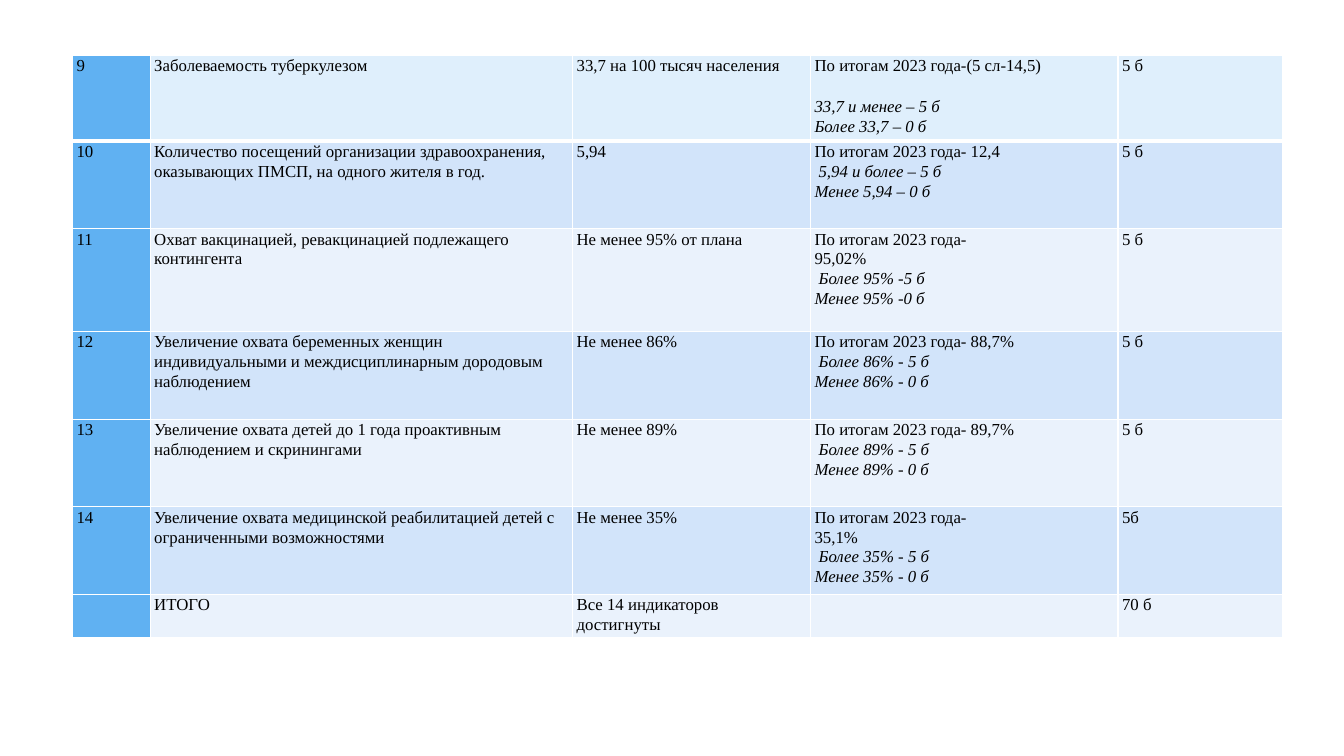
from lxml.etree import SubElement
from pptx import Presentation
from pptx.dml.color import RGBColor
from pptx.oxml.ns import qn
from pptx.util import Inches, Pt

# Number, indicator, target, result lines, scoring lines, points
INDICATORS = [
    ("9", "Заболеваемость туберкулезом", "33,7 на 100 тысяч населения",
     ["По итогам 2023 года-(5 сл-14,5)"],
     ["33,7 и менее – 5 б", "Более 33,7 – 0 б"], "5 б"),
    ("10", "Количество посещений организации здравоохранения, "
           "оказывающих ПМСП, на одного жителя в год.", "5,94",
     ["По итогам 2023 года- 12,4"],
     ["5,94 и более – 5 б", "Менее 5,94 – 0 б"], "5 б"),
    ("11", "Охват вакцинацией, ревакцинацией подлежащего контингента",
     "Не менее 95% от плана",
     ["По итогам 2023 года-", "95,02%"],
     ["Более 95% -5 б", "Менее 95% -0 б"], "5 б"),
    ("12", "Увеличение охвата беременных женщин индивидуальными и "
           "междисциплинарным дородовым наблюдением", "Не менее 86%",
     ["По итогам 2023 года- 88,7%"],
     ["Более 86% - 5 б", "Менее 86% - 0 б"], "5 б"),
    ("13", "Увеличение охвата детей до 1 года проактивным наблюдением "
           "и скринингами", "Не менее 89%",
     ["По итогам 2023 года- 89,7%"],
     ["Более 89% - 5 б", "Менее 89% - 0 б"], "5 б"),
    ("14", "Увеличение охвата медицинской реабилитацией детей с "
           "ограниченными возможностями", "Не менее 35%",
     ["По итогам 2023 года-", "35,1%"],
     ["Более 35% - 5 б", "Менее 35% - 0 б"], "5б"),
    ("", "ИТОГО", "Все 14 индикаторов достигнуты", [], [], "70 б"),
]
COLUMN_WIDTHS = [0.77, 4.19, 2.36, 3.05, 1.63]
ROW_HEIGHTS = [0.85, 0.87, 1.02, 0.87, 0.87, 0.87, 0.43]
COLORS = {"number": "60B1F2", "first": "DFEFFC", "odd": "D2E4FA",
          "even": "EAF2FC", "border": "FFFFFF", "text": "000000"}
FONT = "Times New Roman"
FONT_SIZE = 12
LINE_SPACING = 1.07
BLANK_LINE = 14.8


def add_line(cell, text, italic=False, indent=0, space_before=0):
    """Write text into the cell's empty paragraph, or into a new one."""
    frame = cell.text_frame
    paragraph = frame.add_paragraph() if frame.text else frame.paragraphs[0]
    paragraph.line_spacing = LINE_SPACING
    paragraph.space_before = Pt(space_before)
    if indent:
        paragraph._p.get_or_add_pPr().set("indent", str(Inches(indent)))
    run = paragraph.add_run()
    run.text = text
    run.font.name = FONT
    run.font.size = Pt(FONT_SIZE)
    run.font.italic = italic
    run.font.color.rgb = RGBColor.from_string(COLORS["text"])


def add_borders(cell, bottom_width):
    properties = cell._tc.get_or_add_tcPr()
    for side, width in (("L", 1), ("R", 1), ("T", 1), ("B", bottom_width)):
        line = SubElement(properties, qn(f"a:ln{side}"), w=str(Pt(width)))
        fill = SubElement(line, qn("a:solidFill"))
        SubElement(fill, qn("a:srgbClr"), val=COLORS["border"])


def format_cell(cell, color, bottom_width):
    cell.margin_left = cell.margin_right = Inches(0.04)
    cell.margin_top = cell.margin_bottom = 0
    add_borders(cell, bottom_width)
    cell.fill.solid()
    cell.fill.fore_color.rgb = RGBColor.from_string(color)


def fill_row(cells, row_index, indicator):
    number, name, target, results, scoring, points = indicator
    row_color = "first" if row_index == 0 else "odd" if row_index % 2 else "even"
    for column_index, cell in enumerate(cells):
        color = COLORS["number" if column_index == 0 else row_color]
        format_cell(cell, color, bottom_width=3 if row_index == 0 else 1)

    for column_index, text in ((0, number), (1, name), (2, target), (4, points)):
        if text:
            add_line(cells[column_index], text)
    for text in results:
        add_line(cells[3], text)
    for line_index, text in enumerate(scoring):
        # The first row sets its scoring apart by a line, the others by an indent
        gap = {}
        if line_index == 0:
            gap = {"space_before": BLANK_LINE} if row_index == 0 else {"indent": 0.04}
        add_line(cells[3], text, italic=True, **gap)


def main():
    presentation = Presentation()
    presentation.slide_width = Inches(13.33)
    presentation.slide_height = Inches(7.5)
    slide = presentation.slides.add_slide(presentation.slide_layouts[6])
    table = slide.shapes.add_table(
        len(ROW_HEIGHTS), len(COLUMN_WIDTHS), Inches(0.72), Inches(0.55),
        Inches(sum(COLUMN_WIDTHS)), Inches(sum(ROW_HEIGHTS))).table
    for column, width in zip(table.columns, COLUMN_WIDTHS):
        column.width = Inches(width)
    for row_index, (row, height) in enumerate(zip(table.rows, ROW_HEIGHTS)):
        row.height = Inches(height)
        fill_row(list(row.cells), row_index, INDICATORS[row_index])
    presentation.save("out.pptx")


if __name__ == "__main__":
    main()
